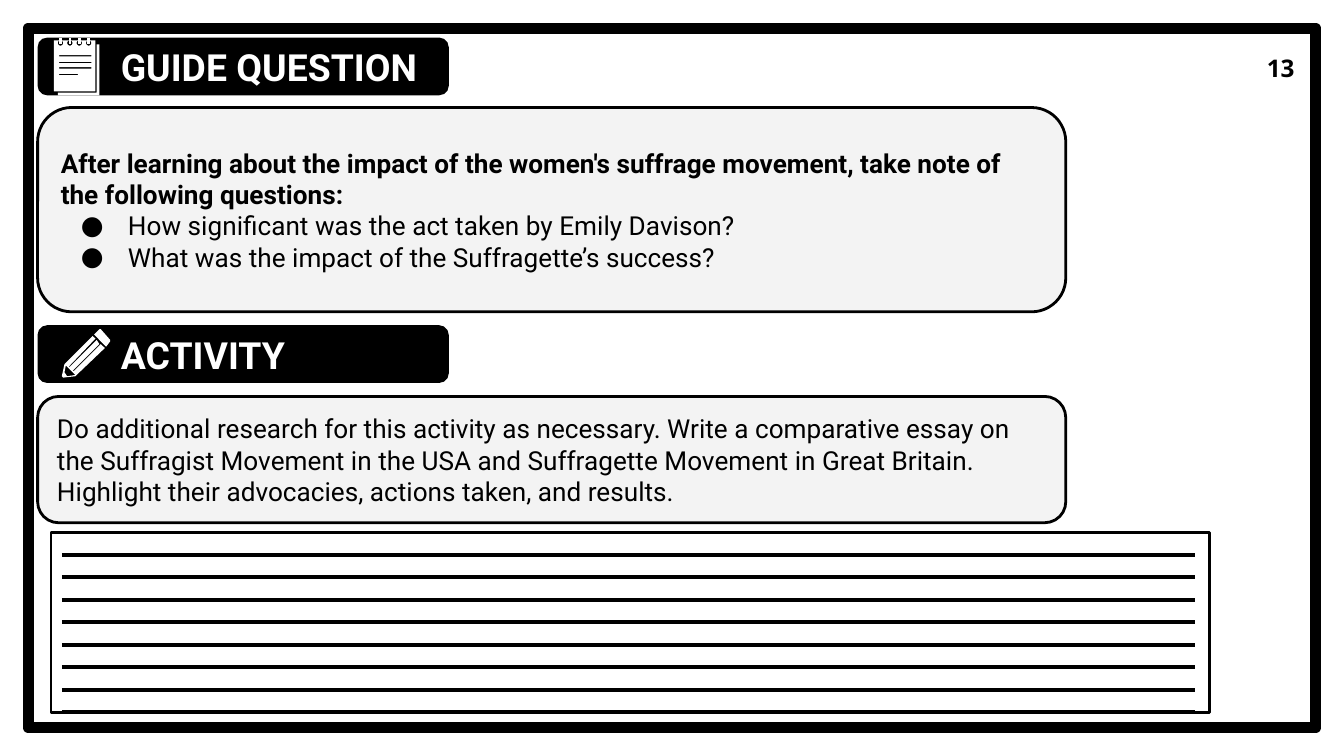
import math
from lxml import etree
from pptx import Presentation, util as u
from pptx.dml.color import RGBColor
from pptx.enum import shapes, text
from pptx.oxml.ns import qn

BLACK = RGBColor(0, 0, 0)
WHITE = RGBColor(255, 255, 255)
GREY = RGBColor(0xF3, 0xF3, 0xF3)
WIDTH = 10
HEIGHT = WIDTH * 9 / 16
FRAME = 0.21
LEFT = 0.28
HEADER_SIZE = 3.06, 0.43
PANEL_WIDTH = 7.65

SECTIONS = [
    {"title": "GUIDE QUESTION", "top": 0.28, "panel_top": 0.8, "panel_height": 1.52,
     "lead": "After learning about the impact of the women's suffrage movement, "
             "take note of the following questions:",
     "bullets": ["How significant was the act taken by Emily Davison?",
                 "What was the impact of the Suffragette’s success?"]},
    {"title": "ACTIVITY", "top": 2.42, "panel_top": 2.95, "panel_height": 0.94,
     "lead": "Do additional research for this activity as necessary. Write a comparative "
             "essay on the Suffragist Movement in the USA and Suffragette Movement in "
             "Great Britain. Highlight their advocacies, actions taken, and results.",
     "bullets": []},
]
PAGE_NUMBER = "13"
ANSWER_BOX = 0.38, 3.96, 8.62, 1.34
LINE_COUNT, LINE_LEFT, LINE_RIGHT = 8, 0.46, 8.89

PAGE_SHADOW = [(0.72, 0.33), (0.72, 0.69), (0.43, 0.69), (0.43, 0.71), (0.74, 0.71), (0.74, 0.33)]
RING_LEFT, RING_STEP, RING_COUNT = 0.44, 0.07, 4
NOTE_LINES = [(0.41, 0.68), (0.46, 0.68), (0.5, 0.68), (0.55, 0.58)]
ERASER = [(0.74, 2.45), (0.7, 2.49), (0.79, 2.58), (0.82, 2.54), (0.82, 2.53), (0.75, 2.45)]
PENCIL = [(0.69, 2.5), (0.48, 2.71), (0.46, 2.8), (0.47, 2.81), (0.56, 2.8), (0.78, 2.59),
          (0.75, 2.56), (0.55, 2.76), (0.54, 2.76), (0.74, 2.56), (0.72, 2.53),
          (0.52, 2.73), (0.51, 2.73), (0.71, 2.52)]
PENCIL_TIP = [(0.49, 2.72), (0.56, 2.79), (0.5, 2.8), (0.48, 2.77)]

presentation = Presentation()
presentation.slide_width = u.Inches(WIDTH)
presentation.slide_height = u.Inches(HEIGHT)
slide = presentation.slides.add_slide(presentation.slide_layouts[6])


def paint(shape, fill=None, line=None):
    shape.shadow.inherit = False
    if fill is None:
        shape.fill.background()
    else:
        shape.fill.solid()
        shape.fill.fore_color.rgb = fill
    if line is None:
        shape.line.fill.background()
    else:
        shape.line.color.rgb = BLACK
        shape.line.width = u.Pt(line)


def add_box(kind, left, top, width, height, fill=None, line=None):
    shape = slide.shapes.add_shape(kind, *map(u.Inches, (left, top, width, height)))
    paint(shape, fill, line)
    return shape


def write(shape, words, size=14, color=BLACK, bold=False, font="Roboto",
          align=text.PP_ALIGN.LEFT, margin=0, indent=0, bullet=None, first=True):
    frame = shape.text_frame
    frame.word_wrap = True
    frame.vertical_anchor = text.MSO_ANCHOR.MIDDLE
    frame.margin_left = frame.margin_right = u.Inches(0.1)
    frame.margin_top = frame.margin_bottom = u.Inches(0.1)
    paragraph = frame.paragraphs[0] if first else frame.add_paragraph()
    paragraph.alignment = align
    properties = paragraph._p.get_or_add_pPr()
    properties.set("marL", str(u.Inches(margin)))
    properties.set("indent", str(u.Inches(indent)))
    if bullet:
        bullet_color = etree.SubElement(properties, qn("a:buClr"))
        etree.SubElement(bullet_color, qn("a:srgbClr")).set("val", str(color))
        etree.SubElement(properties, qn("a:buFont")).set("typeface", font)
        etree.SubElement(properties, qn("a:buChar")).set("char", bullet)
    run = paragraph.add_run()
    run.text = words
    run.font.name, run.font.size, run.font.bold = font, u.Pt(size), bold
    run.font.color.rgb = color


def add_outline(*contours):
    points = [[tuple(map(u.Inches, point)) for point in contour] for contour in contours]
    builder = slide.shapes.build_freeform(*points[0][0])
    builder.add_line_segments(points[0][1:], close=True)
    for contour in points[1:]:
        builder.move_to(*contour[0])
        builder.add_line_segments(contour[1:], close=True)
    paint(builder.convert_to_shape(), WHITE)


def rectangle(left, top, right, bottom):
    return [(left, top), (right, top), (right, bottom), (left, bottom)]


def circle(x, y, radius, sides=16):
    angles = [2 * math.pi * side / sides for side in range(sides)]
    return [(x + radius * math.cos(a), y + radius * math.sin(a)) for a in angles]


def add_notepad():
    add_outline(PAGE_SHADOW)
    rings = [RING_LEFT + RING_STEP * index for index in range(RING_COUNT)]
    holes = [circle(ring + 0.01, 0.32, 0.02) for ring in rings]
    rules = [rectangle(0.44, top, right, top + 0.01) for top, right in NOTE_LINES]
    for ring in rings:
        add_outline(rectangle(ring, 0.28, ring + 0.02, 0.33))
    add_outline(rectangle(0.4, 0.3, 0.71, 0.68), *holes, *rules)


def add_pencil():
    add_outline(ERASER)
    add_outline(PENCIL, PENCIL_TIP)


add_box(shapes.MSO_SHAPE.RECTANGLE, FRAME, FRAME, WIDTH - 2 * FRAME, HEIGHT - 2 * FRAME, WHITE, 6)
number = slide.shapes.add_textbox(*map(u.Inches, (9.13, 0.29, 0.6, 0.43)))
write(number, PAGE_NUMBER, size=13, bold=True, font="Open Sans", align=text.PP_ALIGN.RIGHT)

for section, add_icon in zip(SECTIONS, (add_notepad, add_pencil)):
    header = add_box(shapes.MSO_SHAPE.ROUNDED_RECTANGLE, LEFT, section["top"], *HEADER_SIZE, BLACK)
    write(header, section["title"], size=20, color=WHITE, bold=True, indent=0.5)
    add_icon()
    panel = add_box(shapes.MSO_SHAPE.ROUNDED_RECTANGLE, LEFT, section["panel_top"],
                    PANEL_WIDTH, section["panel_height"], GREY, 1.5)
    write(panel, section["lead"], bold=bool(section["bullets"]))
    for question in section["bullets"]:
        write(panel, question, margin=0.5, indent=-0.35, bullet="●", first=False)

add_box(shapes.MSO_SHAPE.RECTANGLE, *ANSWER_BOX, line=1.5)
_, box_top, _, box_height = ANSWER_BOX
for row in range(1, LINE_COUNT + 1):
    y = u.Inches(box_top + box_height * row / LINE_COUNT)
    rule = slide.shapes.add_connector(shapes.MSO_CONNECTOR.STRAIGHT,
                                      u.Inches(LINE_LEFT), y, u.Inches(LINE_RIGHT), y)
    rule.line.color.rgb = BLACK
    rule.line.width = u.Pt(2.25)
    etree.SubElement(rule._element.spPr, qn("a:effectLst"))

presentation.save("out.pptx")
